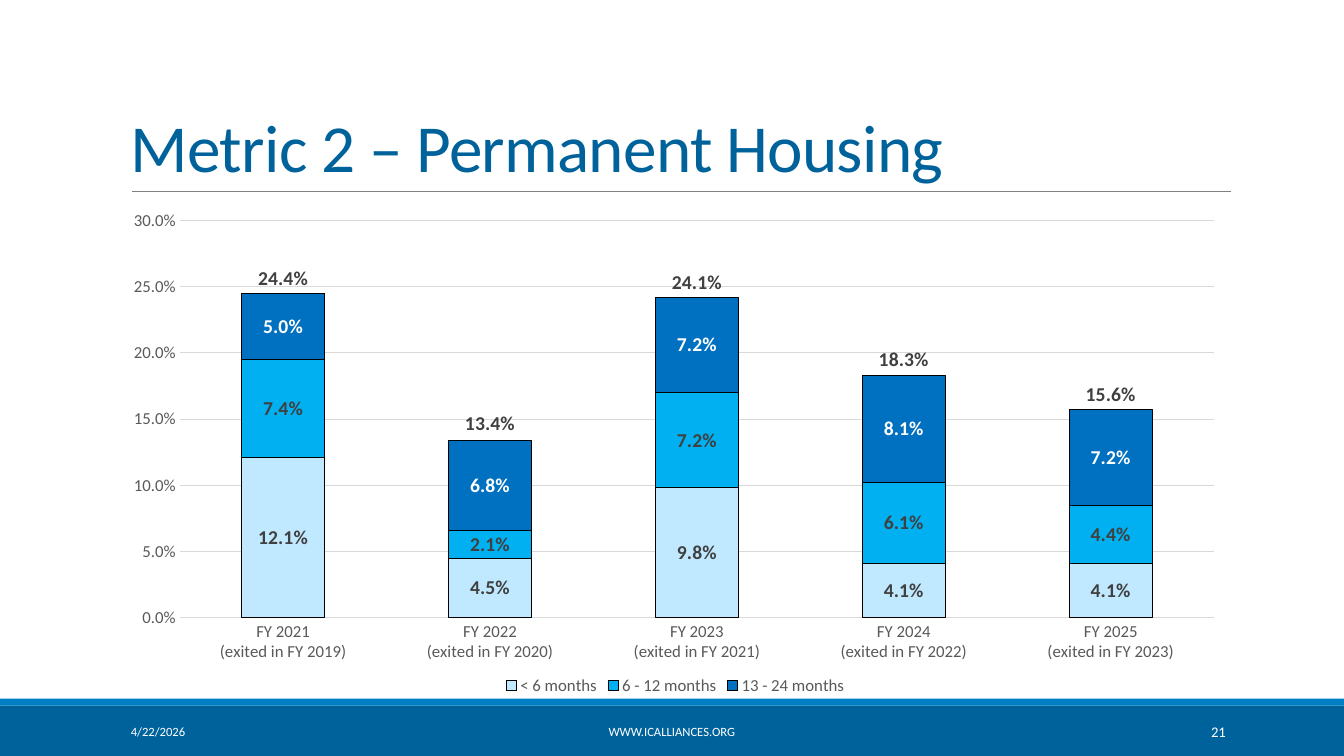
from dataclasses import dataclass

from lxml.etree import SubElement
from pptx import Presentation
from pptx.chart.data import CategoryChartData
from pptx.dml.color import RGBColor
from pptx.enum.chart import (XL_CHART_TYPE, XL_LABEL_POSITION, XL_LEGEND_POSITION,
                             XL_MARKER_STYLE, XL_TICK_MARK)
from pptx.enum.shapes import MSO_CONNECTOR, MSO_SHAPE
from pptx.enum.text import MSO_ANCHOR, PP_ALIGN
from pptx.oxml import parse_xml
from pptx.oxml.ns import nsdecls, qn
from pptx.util import Pt


@dataclass(frozen=True)
class Theme:
    font: str = "Calibri"
    navy: str = "00629B"
    band: str = "007EC4"
    rule: str = "808080"
    grid: str = "D9D9D9"
    axis_text: str = "595959"
    label_text: str = "404040"
    white: str = "FFFFFF"
    black: str = "000000"
    title_size: float = 48
    label_size: float = 14
    axis_size: float = 12
    number_size: float = 10.5
    footer_size: float = 9


THEME = Theme()
PERCENT = "0.0%"
YEARS = range(2021, 2026)
# name, values, fill colour, label colour
DURATIONS = [
    ("< 6 months", (0.121, 0.045, 0.098, 0.041, 0.041), "C0E9FF", THEME.label_text),
    ("6 - 12 months", (0.074, 0.021, 0.072, 0.061, 0.044), "00B0F0", THEME.label_text),
    ("13 - 24 months", (0.05, 0.068, 0.072, 0.081, 0.072), "0070C0", THEME.white),
]
TOTALS = ("Series 4", (0.244, 0.134, 0.241, 0.183, 0.156))
PLOT_LAYOUT = {"x": 0.053, "y": 0.057, "w": 0.933, "h": 0.782}
FOOTERS = [
    ("4/22/2026", 86.4, 194.4, PP_ALIGN.LEFT, THEME.footer_size),
    ("WWW.ICALLIANCES.ORG", 290.16, 379.44, PP_ALIGN.CENTER, THEME.footer_size),
    ("21", 779.76, 102.96, PP_ALIGN.RIGHT, THEME.number_size),
]


def apply(target, values):
    for name, value in values.items():
        setattr(target, name, value)


def style_font(font, size, color, bold=False):
    apply(font, {"name": THEME.font, "size": Pt(size), "bold": bold})
    font.color.rgb = RGBColor.from_string(color)


def style_line(line, color, width):
    line.color.rgb = RGBColor.from_string(color)
    line.width = Pt(width)


def add_band(slide, top, height, color):
    band = slide.shapes.add_shape(MSO_SHAPE.RECTANGLE, 0, Pt(top), Pt(960), Pt(height))
    band.shadow.inherit = False
    band.fill.solid()
    band.fill.fore_color.rgb = RGBColor.from_string(color)
    band.line.fill.background()


def add_title_rule(slide):
    rule = slide.shapes.add_connector(MSO_CONNECTOR.STRAIGHT, Pt(94.3), Pt(136.8),
                                      Pt(879.1), Pt(136.8))
    style_line(rule.line, THEME.rule, 0.5)
    SubElement(rule._element.spPr, qn("a:effectLst"))


def add_text(slide, text, bounds, size, color, anchor=MSO_ANCHOR.MIDDLE, **paragraph_format):
    """Place one line of text and return its run."""
    frame = slide.shapes.add_textbox(*map(Pt, bounds)).text_frame
    apply(frame, {"word_wrap": True, "vertical_anchor": anchor})
    paragraph = frame.paragraphs[0]
    apply(paragraph, paragraph_format)
    run = paragraph.add_run()
    run.text = text
    style_font(run.font, size, color)
    return run


def label_values(series, color, position):
    labels = series.data_labels
    apply(labels, {"show_value": True, "number_format": PERCENT,
                   "number_format_is_linked": False, "position": position})
    style_font(labels.font, THEME.label_size, color, bold=True)


def style_axes(chart):
    for axis in (chart.category_axis, chart.value_axis):
        apply(axis, {"major_tick_mark": XL_TICK_MARK.NONE,
                     "minor_tick_mark": XL_TICK_MARK.NONE})
        style_font(axis.tick_labels.font, THEME.axis_size, THEME.axis_text)
    style_line(chart.category_axis.format.line, THEME.grid, 0.75)
    values = chart.value_axis
    apply(values, {"minimum_scale": 0, "maximum_scale": 0.3, "major_unit": 0.05})
    apply(values.tick_labels, {"number_format": PERCENT, "number_format_is_linked": False})
    values.format.line.fill.background()
    style_line(values.major_gridlines.format.line, THEME.grid, 0.75)


def move_totals_to_line(chart):
    """Turn the last stacked series into an unseen line that carries the totals."""
    bars = chart._chartSpace.find(".//" + qn("c:barChart"))
    totals = bars.findall(qn("c:ser"))[-1]
    for bar_setting in totals.findall(qn("c:invertIfNegative")):
        totals.remove(bar_setting)
    line_plot = parse_xml(f'<c:lineChart {nsdecls("c")}><c:grouping val="standard"/>'
                          '<c:varyColors val="0"/></c:lineChart>')
    line_plot.append(totals)
    SubElement(line_plot, qn("c:marker"), val="1")
    for axis_id in bars.findall(qn("c:axId")):
        SubElement(line_plot, qn("c:axId"), val=axis_id.get("val"))
    bars.addnext(line_plot)
    series = chart.plots[1].series[0]
    series.smooth = False
    series.marker.style = XL_MARKER_STYLE.NONE
    series.format.line.fill.background()
    label_values(series, THEME.label_text, XL_LABEL_POSITION.ABOVE)


def fix_plot_area(chart):
    plot_area = chart._chartSpace.find(".//" + qn("c:plotArea"))
    for automatic in plot_area.findall(qn("c:layout")):
        plot_area.remove(automatic)
    layout = parse_xml(f'<c:layout {nsdecls("c")}><c:manualLayout>'
                       '<c:layoutTarget val="inner"/><c:xMode val="edge"/>'
                       '<c:yMode val="edge"/></c:manualLayout></c:layout>')
    for side, share in PLOT_LAYOUT.items():
        SubElement(layout[0], qn(f"c:{side}"), val=str(share))
    plot_area.insert(0, layout)


def add_legend(chart):
    chart.has_legend = True
    legend = chart.legend
    apply(legend, {"position": XL_LEGEND_POSITION.BOTTOM, "include_in_layout": False})
    style_font(legend.font, THEME.axis_size, THEME.axis_text)
    hidden_totals = parse_xml(f'<c:legendEntry {nsdecls("c")}><c:idx val="{len(DURATIONS)}"/>'
                              '<c:delete val="1"/></c:legendEntry>')
    # The bottom position is always written, so the entry has a fixed neighbour.
    legend._element.get_or_add_legendPos().addnext(hidden_totals)


def add_housing_chart(slide):
    data = CategoryChartData(number_format=PERCENT)
    data.categories = [f"FY {year}\n(exited in FY {year - 2})" for year in YEARS]
    for name, values, *_ in [*DURATIONS, TOTALS]:
        data.add_series(name, values)
    chart = slide.shapes.add_chart(XL_CHART_TYPE.COLUMN_STACKED, Pt(86.4), Pt(136.8),
                                   Pt(792), Pt(362.88), data).chart
    chart.has_title = False
    style_font(chart.font, THEME.axis_size, THEME.axis_text)
    columns = chart.plots[0]
    apply(columns, {"gap_width": 150, "overlap": 100, "vary_by_categories": False})
    for series, (_, _, fill, label_color) in zip(columns.series, DURATIONS):
        series.format.fill.solid()
        series.format.fill.fore_color.rgb = RGBColor.from_string(fill)
        style_line(series.format.line, THEME.black, 0.75)
        label_values(series, label_color, XL_LABEL_POSITION.CENTER)
    move_totals_to_line(chart)
    style_axes(chart)
    fix_plot_area(chart)
    add_legend(chart)


def main():
    deck = Presentation()
    apply(deck, {"slide_width": Pt(960), "slide_height": Pt(540)})
    slide = deck.slides.add_slide(deck.slide_layouts[6])
    add_band(slide, 504, 36, THEME.navy)
    add_band(slide, 499, 5, THEME.band)
    add_title_rule(slide)
    title = add_text(slide, "Metric 2 – Permanent Housing", (86.4, 22.32, 792, 114.48),
                     THEME.title_size, THEME.navy, MSO_ANCHOR.BOTTOM, line_spacing=0.85)
    title.font._element.set("spc", "-50")
    add_housing_chart(slide)
    for text, left, width, alignment, size in FOOTERS:
        add_text(slide, text, (left, 508.32, width, 28.8), size, THEME.white,
                 alignment=alignment)
    deck.save("out.pptx")


if __name__ == "__main__":
    main()
